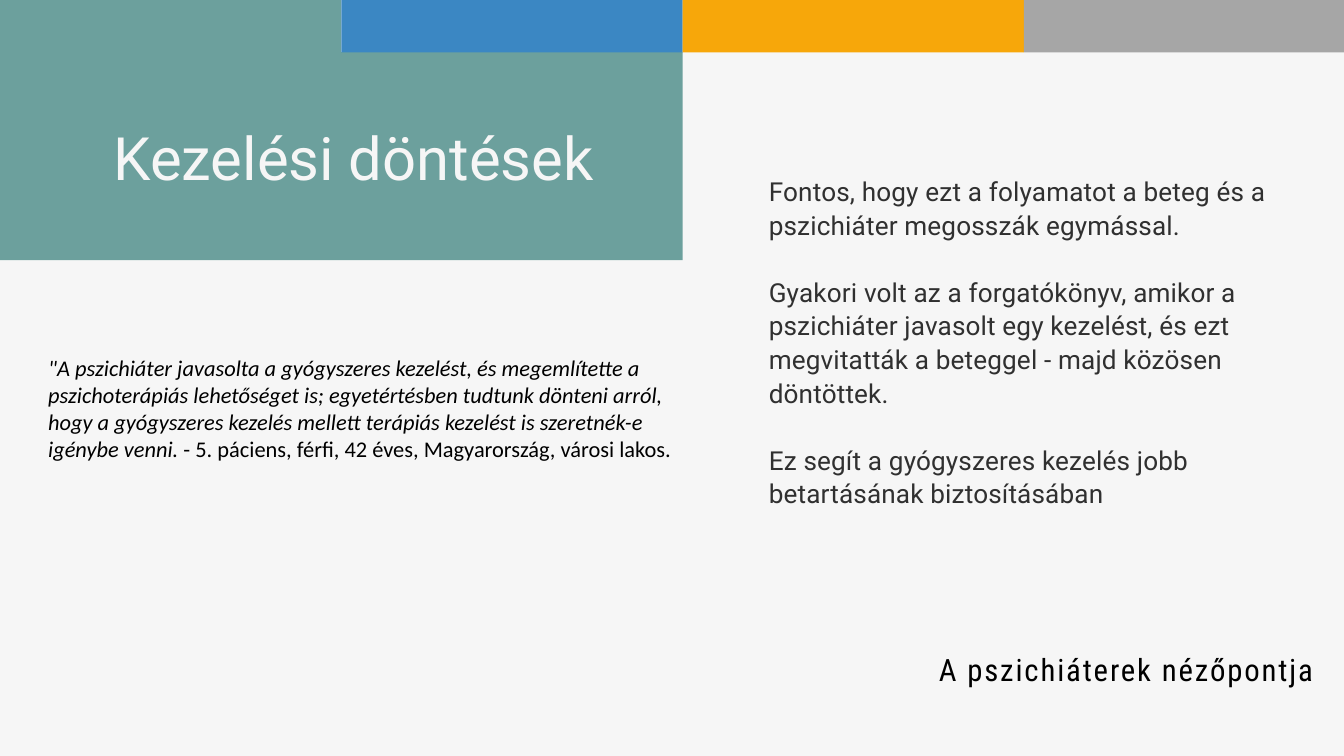
from lxml.etree import SubElement
from pptx import Presentation
from pptx.dml.color import RGBColor
from pptx.enum.shapes import MSO_SHAPE
from pptx.enum.text import MSO_ANCHOR, MSO_AUTO_SIZE, PP_ALIGN
from pptx.oxml.ns import qn
from pptx.util import Cm, Pt

HUES = {
    "teal": "6CA09D", "blue": "3B87C3", "amber": "F7A70A", "grey": "A6A6A6",
    "pale": "F6F6F6", "dark": "303030", "black": "000000",
}


def block(left, top, width, height, hue):
    rect = slide.shapes.add_shape(
        MSO_SHAPE.RECTANGLE, Cm(left), Cm(top), Cm(width), Cm(height))
    rect.shadow.inherit = False
    rect.fill.solid()
    rect.fill.fore_color.rgb = RGBColor.from_string(HUES[hue])
    rect.line.fill.background()
    return rect


def style(para, face, size, hue, lead=None, track=0):
    para.font.name = face
    para.font.size = Pt(size)
    para.font.color.rgb = RGBColor.from_string(HUES[hue])
    if lead:
        para.line_spacing = Pt(lead)
    if track:
        for run in para.runs:
            run.font._rPr.set("spc", str(track))


deck = Presentation()
deck.slide_width, deck.slide_height = Cm(50.8), Cm(28.58)
slide = deck.slides.add_slide(deck.slide_layouts[1])
slide.background.fill.solid()
slide.background.fill.fore_color.rgb = RGBColor.from_string(HUES["pale"])

# Colour strip: four bars, the last one ending at the slide edge
step = 12.9
for i, hue in enumerate(["teal", "blue", "amber", "grey"]):
    block(i * step, 0, min(step, 50.8 - i * step), 1.98, hue)

# Title on its panel, which lies behind the text
title, body = slide.placeholders
panel = block(0, 1.97, 2 * step, 7.87, "teal")
title._element.addprevious(panel._element)
title.text_frame.text = "Kezelési döntések"
head = title.text_frame.paragraphs[0]
head.alignment = PP_ALIGN.LEFT
style(head, "Roboto", 64, "pale", 83.2)

# Main points, one blank line apart
points = [
    "Fontos, hogy ezt a folyamatot a beteg és a pszichiáter megosszák egymással.",
    "Gyakori volt az a forgatókönyv, amikor a pszichiáter javasolt egy kezelést, "
    "és ezt megvitatták a beteggel - majd közösen döntöttek.",
    "Ez segít a gyógyszeres kezelés jobb betartásának biztosításában",
]
body.text_frame.text = "\n".join(points)
for i, para in enumerate(body.text_frame.paragraphs):
    para.space_before = Pt(36 if i else 0)
    props = para._p.get_or_add_pPr()
    props.set("marL", "0")
    props.set("indent", "0")
    SubElement(props, qn("a:buNone"))
    style(para, "Roboto", 28, "dark", 36, 20)

# Closing line at lower right
foot = slide.shapes.add_textbox(0, 0, 0, 0)
foot.text_frame.text = "A pszichiáterek nézőpontja"
para = foot.text_frame.paragraphs[0]
para.alignment = PP_ALIGN.RIGHT
style(para, "Roboto Condensed", 33, "black", 46.2, 200)

# Places of the three frames without margins
for shape, left, top, width, height in [
    (title, 4.29, 4.34, 18.52, 2.82),
    (body, 29.06, 6.55, 18.92, 17.88),
    (foot, 29.21, 24.36, 20.45, 3.17),
]:
    shape.left, shape.top = Cm(left), Cm(top)
    shape.width, shape.height = Cm(width), Cm(height)
    frame = shape.text_frame
    frame.word_wrap = True
    frame.auto_size = MSO_AUTO_SIZE.NONE
    frame.vertical_anchor = MSO_ANCHOR.TOP
    frame.margin_left = frame.margin_right = 0
    frame.margin_top = frame.margin_bottom = 0

# Patient quote: italic words, upright source
quote = slide.shapes.add_textbox(Cm(1.57), Cm(13.28), Cm(24.23), Cm(4.37))
quote.text_frame.word_wrap = True
para = quote.text_frame.paragraphs[0]
for text, slant in [
    ('"A pszichiáter javasolta a gyógyszeres kezelést, és megemlítette a '
     "pszichoterápiás lehetőséget is; egyetértésben tudtunk dönteni arról, "
     "hogy a gyógyszeres kezelés mellett terápiás kezelést is szeretnék-e "
     "igénybe venni. ", True),
    ("- 5. páciens, férfi, 42 éves, Magyarország, városi lakos.", False),
]:
    run = para.add_run()
    run.text = text
    run.font.italic = slant
style(para, "Calibri", 24, "black")

deck.save("out.pptx")
